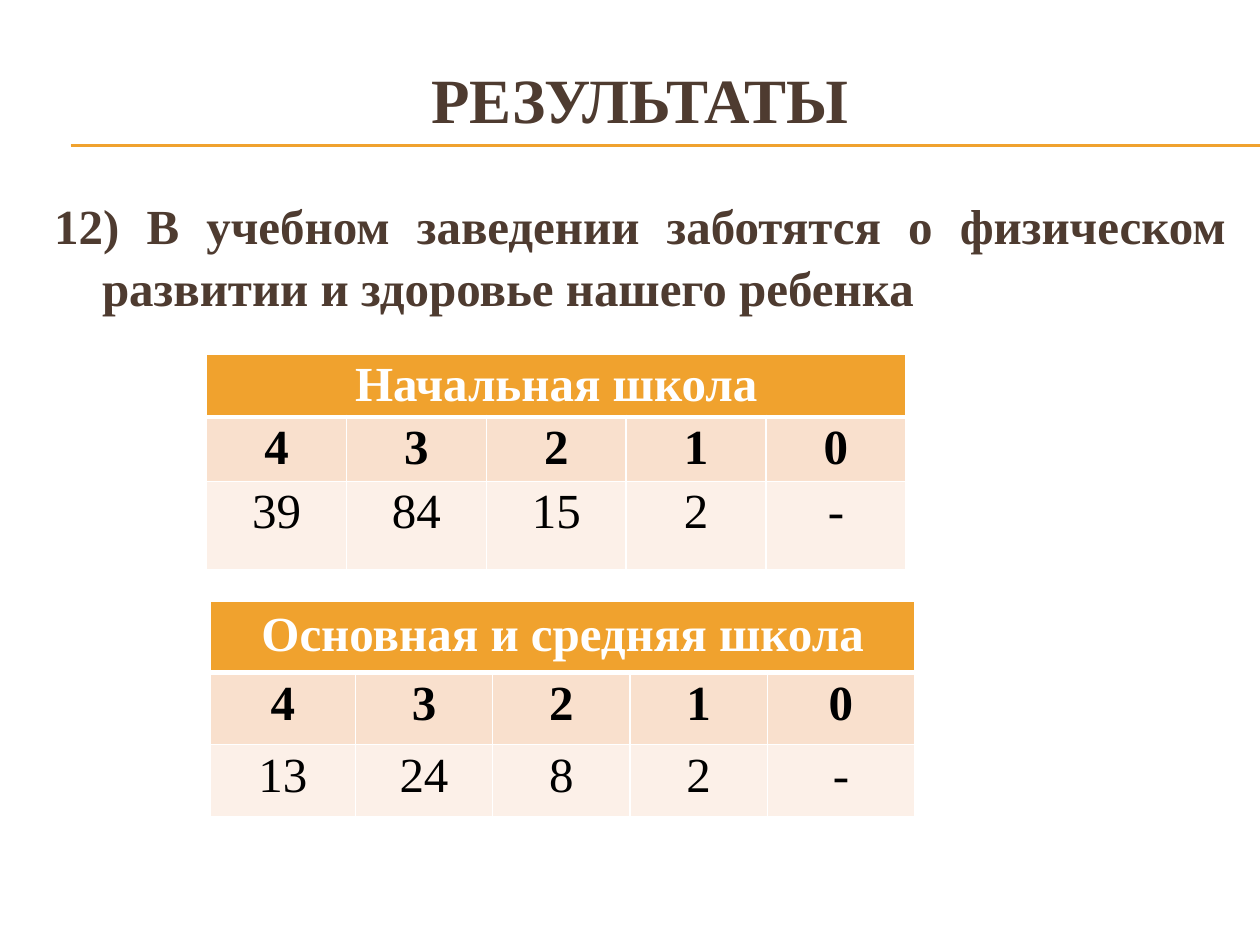
from lxml import etree
from pptx import Presentation
from pptx.dml.color import RGBColor as Rgb
from pptx.enum.shapes import MSO_CONNECTOR as Conn
from pptx.enum.text import MSO_ANCHOR as Anchor, PP_ALIGN as Align
from pptx.oxml.ns import qn
from pptx.util import Inches, Pt

COLORS = {"gold": "F0A22E", "brown": "4E3B30", "white": "FFFFFF",
          "black": "000000", "peach": "F9E0CD", "cream": "FCF0E8"}
FONT = "Times New Roman"


class Deck:
    def __init__(self):
        self.prs = Presentation()
        self.prs.slide_width, self.prs.slide_height = Inches(10), Inches(7.5)
        self.slide = self.prs.slides.add_slide(self.prs.slide_layouts[1])

    def color(self, name):
        return Rgb.from_string(COLORS[name])

    def label(self, frame, text, size, color, align, bold=True):
        frame.text = text
        para = frame.paragraphs[0]
        para.alignment = align
        font = para.runs[0].font
        font.name, font.size, font.bold = FONT, Pt(size), bold
        font.color.rgb = self.color(color)
        return para

    def place(self, holder, box):
        holder.left, holder.top, holder.width, holder.height = map(Inches, box)
        holder.text_frame.word_wrap = True
        return holder.text_frame

    def title(self, text, box):
        frame = self.place(self.slide.shapes.title, box)
        frame.vertical_anchor = Anchor.MIDDLE
        self.label(frame, text, 36, "brown", Align.CENTER)

    def body(self, text, box):
        frame = self.place(self.slide.placeholders[1], box)
        para = self.label(frame, text, 28, "brown", Align.JUSTIFY)
        para.line_spacing = 1.05
        # Hanging indent without a bullet
        props = para._p.get_or_add_pPr()
        props.set("marL", str(Inches(0.38)))
        props.set("indent", str(Inches(-0.38)))
        etree.SubElement(props, qn("a:buNone"))

    def rule(self, left, top, right):
        line = self.slide.shapes.add_connector(
            Conn.STRAIGHT, Inches(left), Inches(top), Inches(right), Inches(top))
        line.line.color.rgb = self.color("gold")
        line.line.width = Pt(0.75)
        etree.SubElement(line._element.spPr, qn("a:effectLst"))

    def border(self, cell, sides):
        props = cell._tc.get_or_add_tcPr()
        for side, width in sides.items():
            line = etree.SubElement(props, qn(f"a:ln{side}"), w=str(Pt(width)))
            fill = etree.SubElement(line, qn("a:solidFill"))
            etree.SubElement(fill, qn("a:srgbClr"), val=COLORS["white"])

    def cell(self, cell, text, fill, color, bold, sides):
        self.border(cell, sides)
        cell.fill.solid()
        cell.fill.fore_color.rgb = self.color(fill)
        cell.margin_left = cell.margin_right = Inches(0.07)
        cell.margin_top = cell.margin_bottom = 0
        if text:
            para = self.label(cell.text_frame, text, 28, color, Align.CENTER, bold)
            para.line_spacing = 1.07

    def table(self, left, top, cols, rows, head, counts):
        grid = self.slide.shapes.add_table(
            len(rows), len(cols), Inches(left), Inches(top),
            Inches(sum(cols)), Inches(sum(rows))).table
        for col, width in zip(grid.columns, cols):
            col.width = Inches(width)
        for row, height in zip(grid.rows, rows):
            row.height = Inches(height)
        grid.cell(0, 0).merge(grid.cell(0, len(cols) - 1))

        # Header, marks, answer counts
        thin = {"L": 1, "R": 1, "B": 1}
        thick = {"L": 1, "R": 1, "T": 1, "B": 3}
        looks = [([head] + [""] * 4, "gold", "white", True, thick),
                 ("43210", "peach", "black", True, thin),
                 (counts, "cream", "black", False, thin)]
        for r, (texts, *look) in enumerate(looks):
            for c, text in enumerate(texts):
                self.cell(grid.cell(r, c), text, *look)
        return grid


def main():
    deck = Deck()

    # Title with a double rule
    for top in (1.15, 1.16):
        deck.rule(0.56, top, 10)
    deck.title("РЕЗУЛЬТАТЫ", (0.33, 0.31, 9.5, 0.94))

    # Question
    deck.body("12) В учебном заведении заботятся о физическом "
              "развитии и здоровье нашего ребенка", (0.33, 1.48, 9.5, 5.16))

    # Answers by school level
    deck.table(1.64, 2.81, [1.11] * 5, [0.5, 0.51, 0.7],
               "Начальная школа", ["39", "84", "15", "2", "-"])
    upper = deck.table(1.67, 4.77, [1.15, 1.09, 1.09, 1.09, 1.17], [0.57] * 3,
                       "Основная и средняя школа", ["13", "24", "8", "2", "-"])
    head = upper.cell(0, 0)
    head.margin_left = head.margin_right = Inches(0.1)
    head.margin_top = head.margin_bottom = Inches(0.05)
    head.text_frame.paragraphs[0].line_spacing = 1.0

    deck.prs.save("out.pptx")


if __name__ == "__main__":
    main()
